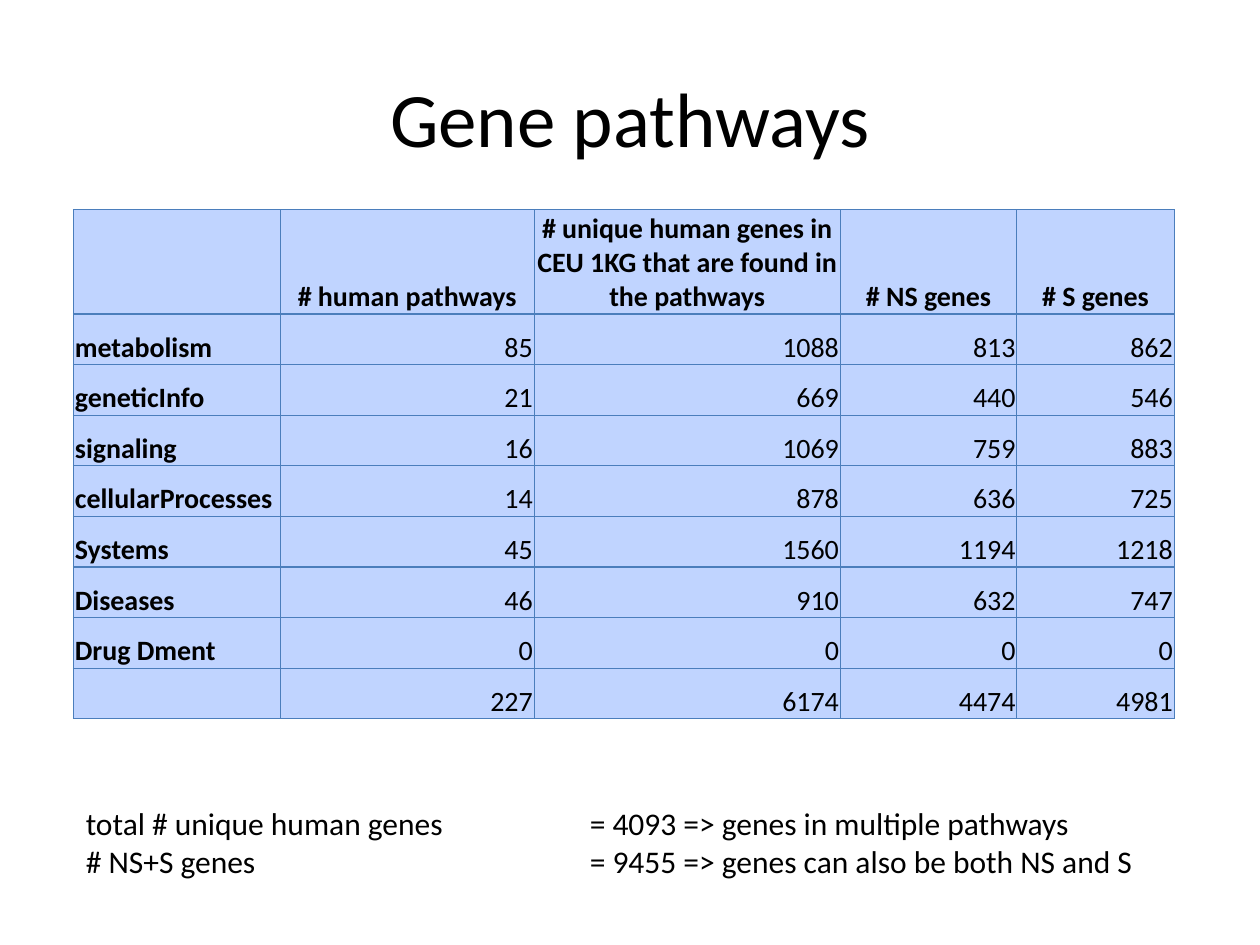
from lxml.etree import SubElement
from pptx import Presentation
from pptx.dml.color import RGBColor
from pptx.enum.text import MSO_ANCHOR, PP_ALIGN
from pptx.oxml.ns import qn
from pptx.util import Cm, Pt

COLORS = {"text": "000000", "cell": "C0D4FF", "border": "4B7EBC"}
FONT = "Calibri"
HEADINGS = ["", "# human pathways",
            "# unique human genes in CEU 1KG that are found in the pathways",
            "# NS genes", "# S genes"]
PATHWAYS = [
    ("metabolism", 85, 1088, 813, 862),
    ("geneticInfo", 21, 669, 440, 546),
    ("signaling", 16, 1069, 759, 883),
    ("cellularProcesses", 14, 878, 636, 725),
    ("Systems", 45, 1560, 1194, 1218),
    ("Diseases", 46, 910, 632, 747),
    ("Drug Dment", 0, 0, 0, 0),
    ("", 227, 6174, 4474, 4981),
]
COLUMN_WIDTHS = [4.17, 5.12, 6.17, 3.56, 3.17]
HEADING_HEIGHT = 2.1
ROW_HEIGHT = 1.02
TOTALS = [
    ("total # unique human genes", "= 4093 => genes in multiple pathways"),
    ("# NS+S genes", "= 9455 => genes can also be both NS and S"),
]


def write(paragraph, text, size=16, bold=False, align=PP_ALIGN.LEFT):
    """Put formatted text into a paragraph."""
    paragraph.alignment = align
    run = paragraph.add_run()
    run.text = text
    run.font.name = FONT
    run.font.size = Pt(size)
    run.font.bold = bold
    run.font.color.rgb = RGBColor.from_string(COLORS["text"])


def add_title(slide, text):
    """Place the slide title."""
    title = slide.shapes.title
    title.left, title.top, title.width, title.height = Cm(1.27), Cm(0.76), Cm(22.86), Cm(3.18)
    title.text_frame.vertical_anchor = MSO_ANCHOR.MIDDLE
    write(title.text_frame.paragraphs[0], text, size=44, align=PP_ALIGN.CENTER)


def style_cell(cell):
    """Give a table cell its borders, fill, margins and anchor."""
    properties = cell._tc.get_or_add_tcPr()
    for side in ("lnL", "lnR", "lnT", "lnB"):
        border = SubElement(properties, qn(f"a:{side}"), w=str(Pt(0.75)))
        fill = SubElement(border, qn("a:solidFill"))
        SubElement(fill, qn("a:srgbClr"), val=COLORS["border"])
    cell.fill.solid()
    cell.fill.fore_color.rgb = RGBColor.from_string(COLORS["cell"])
    cell.margin_left = cell.margin_right = cell.margin_top = Cm(0.03)
    cell.margin_bottom = 0
    cell.vertical_anchor = MSO_ANCHOR.BOTTOM


def add_pathway_table(slide):
    """Add the table of gene counts per pathway group."""
    rows = [HEADINGS, *PATHWAYS]
    heights = [HEADING_HEIGHT] + [ROW_HEIGHT] * len(PATHWAYS)
    table = slide.shapes.add_table(
        len(rows), len(HEADINGS), Cm(1.48), Cm(4.23),
        Cm(sum(COLUMN_WIDTHS)), Cm(sum(heights))).table
    for column, width in zip(table.columns, COLUMN_WIDTHS):
        column.width = Cm(width)
    for row_index, (values, height) in enumerate(zip(rows, heights)):
        table.rows[row_index].height = Cm(height)
        for column_index, value in enumerate(values):
            cell = table.cell(row_index, column_index)
            style_cell(cell)
            if value == "":
                continue
            is_heading, is_label = row_index == 0, column_index == 0
            align = (PP_ALIGN.CENTER if is_heading
                     else PP_ALIGN.LEFT if is_label else PP_ALIGN.RIGHT)
            write(cell.text_frame.paragraphs[0], str(value),
                  bold=is_heading or is_label, align=align)


def add_totals(slide):
    """Add the totals, lined up at a tab stop."""
    frame = slide.shapes.add_textbox(Cm(1.48), Cm(16.08), Cm(22.23), Cm(1.8)).text_frame
    frame.word_wrap = True
    for index, (label, result) in enumerate(TOTALS):
        paragraph = frame.add_paragraph() if index else frame.paragraphs[0]
        write(paragraph, f"{label}\t{result}", size=18)
        stops = SubElement(paragraph._p.get_or_add_pPr(), qn("a:tabLst"))
        SubElement(stops, qn("a:tab"), pos=str(Cm(10.16)), algn="l")


def main():
    """Build and save the slide."""
    presentation = Presentation()
    presentation.slide_width, presentation.slide_height = Cm(25.4), Cm(19.05)
    slide = presentation.slides.add_slide(presentation.slide_layouts[5])
    add_title(slide, "Gene pathways")
    add_pathway_table(slide)
    add_totals(slide)
    presentation.save("out.pptx")


if __name__ == "__main__":
    main()
